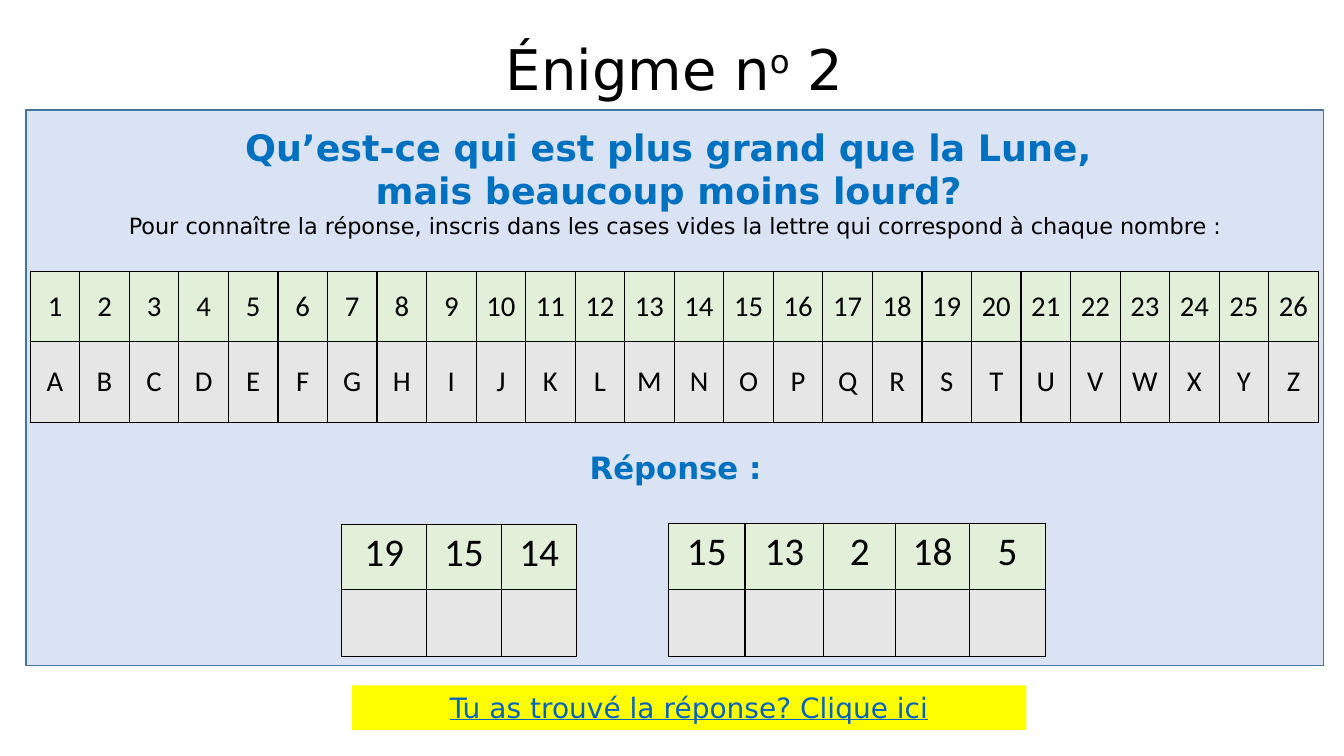
import dataclasses

import lxml.etree
import pptx
import pptx.dml.color
import pptx.enum.shapes
import pptx.enum.text
import pptx.oxml.ns
import pptx.util

BLACK = pptx.dml.color.RGBColor(0x00, 0x00, 0x00)
BLUE = pptx.dml.color.RGBColor(0x00, 0x70, 0xC0)
LINK_BLUE = pptx.dml.color.RGBColor(0x05, 0x63, 0xC1)
PANEL_FILL = pptx.dml.color.RGBColor(0xDA, 0xE3, 0xF3)
PANEL_EDGE = pptx.dml.color.RGBColor(0x43, 0x73, 0x9E)
GREEN = pptx.dml.color.RGBColor(0xE2, 0xF0, 0xD9)
GREY = pptx.dml.color.RGBColor(0xE7, 0xE6, 0xE6)
YELLOW = pptx.dml.color.RGBColor(0xFF, 0xFF, 0x00)

SLIDE_WIDTH = pptx.util.Inches(13.33)
SLIDE_HEIGHT = pptx.util.Inches(7.5)
TEXT_FONT = "DejaVu Sans"
CELL_FONT = "Calibri"
MIDDLE = pptx.enum.text.MSO_ANCHOR.MIDDLE
TOP = pptx.enum.text.MSO_ANCHOR.TOP

ALPHABET = "ABCDEFGHIJKLMNOPQRSTUVWXYZ"
CODE_WIDTHS = [95.87 / len(ALPHABET)] * len(ALPHABET)
FIRST_WORD_WIDTHS = [6.3, 5.59, 5.59]
SECOND_WORD_WIDTHS = [5.7, 5.86, 5.34, 5.5, 5.64]


@dataclasses.dataclass
class Area:
    """Percentages of the slide's width and height."""

    left: float
    top: float
    width: float
    height: float

    def box(self) -> tuple[int, int, int, int]:
        return across(self.left), down(self.top), across(self.width), down(self.height)


@dataclasses.dataclass
class Band:
    left: float
    top: float
    height: float
    widths: list[float]
    entries: list[str]
    fill: pptx.dml.color.RGBColor
    size: float = 28
    anchor: pptx.enum.text.MSO_ANCHOR = TOP


BANDS = [
    Band(2.25, 35.87, 9.47, CODE_WIDTHS,
         [str(number + 1) for number in range(len(ALPHABET))], GREEN, 20.5, MIDDLE),
    Band(2.25, 45.2, 10.67, CODE_WIDTHS, list(ALPHABET), GREY, 20.5, MIDDLE),
    Band(25.43, 69.33, 8.6, FIRST_WORD_WIDTHS, ["19", "15", "14"], GREEN),
    Band(25.43, 78, 8.8, FIRST_WORD_WIDTHS, [""] * 3, GREY),
    Band(49.74, 69.2, 8.8, SECOND_WORD_WIDTHS, ["15", "13", "2", "18", "5"], GREEN),
    Band(49.74, 78, 8.8, SECOND_WORD_WIDTHS, [""] * 5, GREY),
]


def across(percent: float) -> int:
    return round(SLIDE_WIDTH * percent / 100)


def down(percent: float) -> int:
    return round(SLIDE_HEIGHT * percent / 100)


def write(paragraph, text: str, *, size: float, font: str = TEXT_FONT,
          color=BLACK, bold: bool = False, underline: bool = False,
          baseline: int = 0) -> None:
    paragraph.alignment = pptx.enum.text.PP_ALIGN.CENTER
    for index, line in enumerate(text.split("\n")):
        if index:
            paragraph.add_line_break()
        if not line:
            continue
        run = paragraph.add_run()
        run.text = line
        run.font.size = pptx.util.Pt(size)
        run.font.name = font
        run.font.color.rgb = color
        run.font.bold = bold
        run.font.underline = underline
        if baseline:
            run._r.get_or_add_rPr().set("baseline", str(baseline * 1000))


def add_text_area(slide, area: Area):
    text_area = slide.shapes.add_textbox(*area.box())
    text_area.text_frame.word_wrap = True
    return text_area


def add_borders(cell) -> None:
    properties = cell._tc.get_or_add_tcPr()
    for position, side in enumerate(("lnL", "lnR", "lnT", "lnB")):
        border = lxml.etree.Element(pptx.oxml.ns.qn(f"a:{side}"), w=str(pptx.util.Pt(1)))
        paint = lxml.etree.SubElement(border, pptx.oxml.ns.qn("a:solidFill"))
        lxml.etree.SubElement(paint, pptx.oxml.ns.qn("a:srgbClr"), val=str(BLACK))
        properties.insert(position, border)


def add_band(slide, band: Band) -> None:
    area = Area(band.left, band.top, sum(band.widths), band.height)
    grid = slide.shapes.add_table(1, len(band.entries), *area.box()).table
    grid.first_row = False
    grid.horz_banding = False
    for column, width, entry in zip(grid.columns, band.widths, band.entries):
        column.width = across(width)
    for cell, entry in zip(grid.rows[0].cells, band.entries):
        cell.margin_left = cell.margin_right = pptx.util.Inches(0.03)
        cell.vertical_anchor = band.anchor
        cell.fill.solid()
        cell.fill.fore_color.rgb = band.fill
        add_borders(cell)
        if entry:
            write(cell.text_frame.paragraphs[0], entry, size=band.size, font=CELL_FONT)


def add_panel(slide) -> None:
    panel = slide.shapes.add_shape(pptx.enum.shapes.MSO_SHAPE.RECTANGLE,
                                   *Area(1.95, 14.53, 96.55, 73.47).box())
    panel.shadow.inherit = False
    panel.fill.solid()
    panel.fill.fore_color.rgb = PANEL_FILL
    panel.line.color.rgb = PANEL_EDGE
    panel.line.width = pptx.util.Pt(1)
    slide.shapes._spTree.insert(2, panel._element)


def add_title(slide) -> None:
    title = slide.shapes.title
    title.left, title.top, title.width, title.height = Area(7.05, 1.73, 86.27, 15.73).box()
    title.text_frame.vertical_anchor = MIDDLE
    heading = title.text_frame.paragraphs[0]
    heading.line_spacing = 0.9
    write(heading, "Énigme n", size=40)
    write(heading, "o", size=40, baseline=30)
    write(heading, " 2", size=40)


def add_instructions(slide) -> None:
    question = add_text_area(slide, Area(2.25, 15.87, 96.02, 16.67)).text_frame.paragraphs[0]
    write(question, "Qu’est-ce qui est plus grand que la Lune, \nmais beaucoup moins lourd? \n",
          size=26, color=BLUE, bold=True)
    write(question, "Pour connaître la réponse, inscris dans les cases vides "
          "la lettre qui correspond à chaque nombre :", size=16)
    answer = add_text_area(slide, Area(2.25, 58.67, 96.02, 6.27)).text_frame.paragraphs[0]
    write(answer, "Réponse :", size=22, color=BLUE, bold=True)


def add_answer_button(slide) -> None:
    button = add_text_area(slide, Area(26.18, 90.67, 50.19, 5.87))
    button.fill.solid()
    button.fill.fore_color.rgb = YELLOW
    write(button.text_frame.paragraphs[0], "Tu as trouvé la réponse? Clique ici",
          size=20, color=LINK_BLUE, underline=True)


def main() -> None:
    presentation = pptx.Presentation()
    presentation.slide_width = SLIDE_WIDTH
    presentation.slide_height = SLIDE_HEIGHT
    slide = presentation.slides.add_slide(presentation.slide_layouts.get_by_name("Title Only"))
    add_panel(slide)
    add_title(slide)
    add_instructions(slide)
    for band in BANDS:
        add_band(slide, band)
    add_answer_button(slide)
    presentation.save("out.pptx")


if __name__ == "__main__":
    main()
